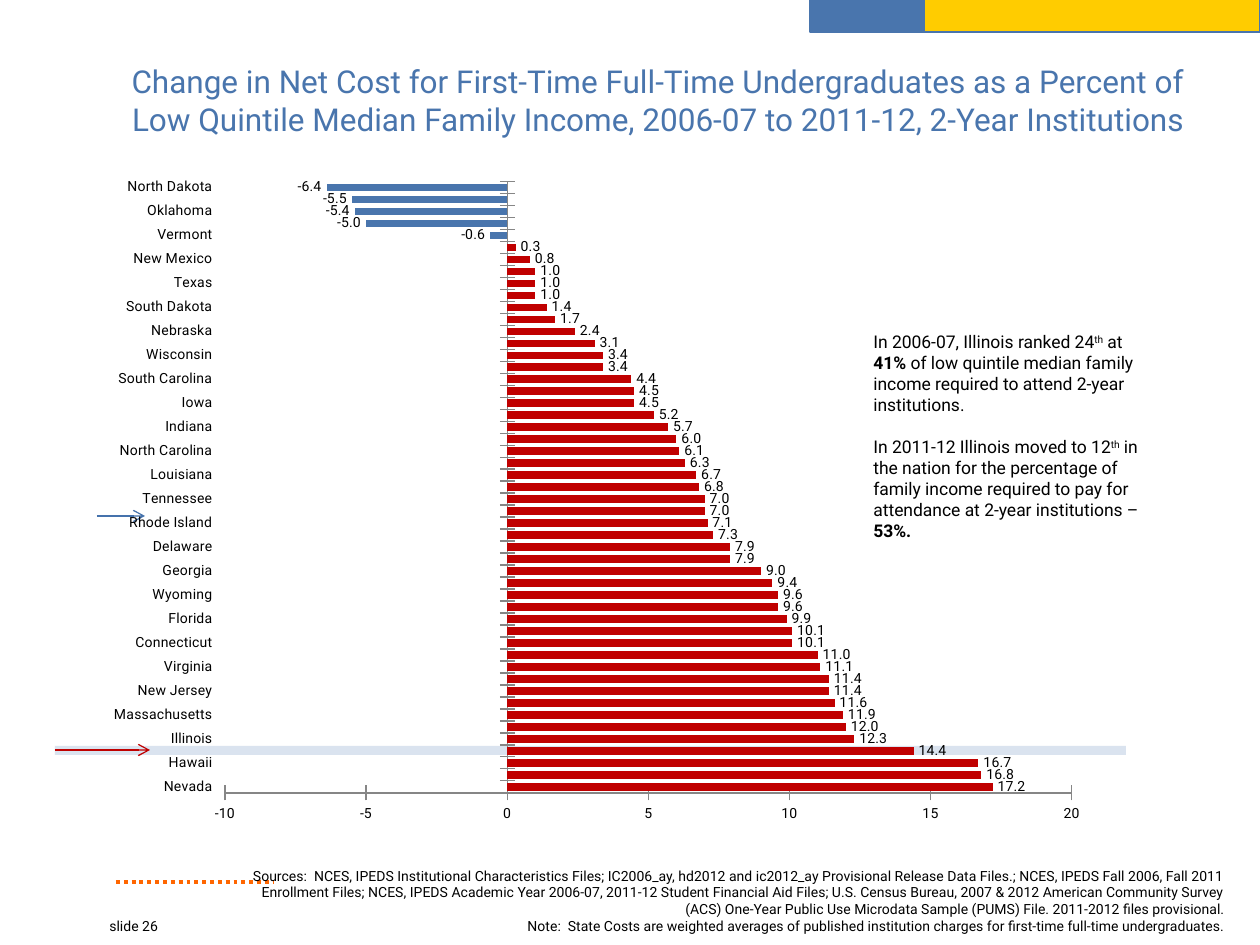
"""Build the slide on change in net cost at 2-year institutions by state."""
from lxml import etree
from pptx import Presentation
from pptx import util as u
from pptx.chart.data import CategoryChartData
from pptx.dml.color import RGBColor
from pptx.enum import chart as kinds
from pptx.enum import shapes, text
from pptx.enum.dml import MSO_LINE
from pptx.oxml.ns import qn

SCALE = u.Inches(1) / 126
FONT = "Roboto"
BLUE, RED, BLACK, GREY = "4975AD", "C00000", "000000", "868686"

TITLE = [[("Change in Net Cost for First-Time Full-Time Undergraduates as a Percent of "
           "Low Quintile Median Family Income, 2006-07 to 2011-12, 2-Year Institutions", "")]]
NUMBER = [[("slide 26", "")]]
SOURCES = [
    [("Sources:  NCES, IPEDS Institutional Characteristics Files; IC2006_ay, hd2012 and ic2012_ay "
      "Provisional Release Data Files.; NCES, IPEDS Fall 2006, Fall 2011 Enrollment Files; NCES, "
      "IPEDS Academic Year 2006-07, 2011-12 Student Financial Aid Files; U.S. Census Bureau, "
      "2007 & 2012 American Community Survey (ACS) One-Year Public Use Microdata Sample (PUMS) "
      "File. 2011-2012 files provisional.", "")],
    [("Note:  State Costs are weighted averages of published institution charges for "
      "first-time full-time undergraduates.", "")],
]
FINDINGS = [
    [("In 2006-07, Illinois ranked 24", ""), ("th", "super"), (" at ", ""), ("41%", "bold"),
     (" of low quintile median family income required to attend 2-year institutions.", "")],
    [("In 2011-12 Illinois moved to 12", ""), ("th", "super"),
     (" in the nation for the percentage of family income required to pay for attendance "
      "at 2-year institutions – ", ""), ("53%.", "bold")],
]
STATES = [
    ("Nevada", 17.2), ("New Hampshire", 16.8), ("Hawaii", 16.7), ("Kentucky", 14.4),
    ("Illinois", 12.3), ("Mississippi", 12), ("Massachusetts", 11.9), ("New York", 11.6),
    ("New Jersey", 11.4), ("Colorado", 11.4), ("Virginia", 11.1), ("Oregon", 11),
    ("Connecticut", 10.1), ("California", 10.1), ("Florida", 9.9), ("Ohio", 9.6),
    ("Wyoming", 9.6), ("Michigan", 9.4), ("Georgia", 9), ("Arizona", 7.9),
    ("Delaware", 7.9), ("Idaho", 7.3), ("Rhode Island", 7.1), ("Nation", 7),
    ("Tennessee", 7), ("Washington", 6.8), ("Louisiana", 6.7), ("Pennsylvania", 6.3),
    ("North Carolina", 6.1), ("Maryland", 6), ("Indiana", 5.7), ("Alabama", 5.2),
    ("Iowa", 4.5), ("Missouri", 4.5), ("South Carolina", 4.4), ("Minnesota", 3.4),
    ("Wisconsin", 3.4), ("Alaska", 3.1), ("Nebraska", 2.4), ("Utah", 1.7),
    ("South Dakota", 1.4), ("Kansas", 1), ("Texas", 1), ("Maine", 1),
    ("New Mexico", 0.8), ("Arkansas", 0.3), ("Vermont", -0.6), ("Montana", -5),
    ("Oklahoma", -5.4), ("West Virginia", -5.5), ("North Dakota", -6.4),
]
BARS = [  # left, top, width, height, fill, line
    (810, -1, 115, 33, BLUE, BLUE),
    (924, -1, 336, 33, "FFCC00", BLUE),
    (55, 746, 1071, 9, "DAE3EF", None),
]
LINES = [  # left, right, y, colour, points, arrow
    (116, 273, 882, "FF6600", 2.25, False),
    (55, 150, 750, RED, 0.75, True),
    (97, 145, 516, "4572AC", 0.75, True),
]
TEXTS = [  # box, paragraphs, size, colour, alignment, anchor, gap
    ((63, 34, 1134, 132), TITLE, 18, BLUE, "RIGHT", "MIDDLE", 0),
    ((97, 911, 126, 34), NUMBER, 8, BLACK, "LEFT", "TOP", 0),
    ((220, 861, 1018, 81), SOURCES, 8, BLACK, "RIGHT", "TOP", 0),
    ((861, 325, 305, 224), FINDINGS, 10, BLACK, "LEFT", "TOP", 12),
]
CHART = (94, 168, 1008, 672)
PLOT = {"x": 0.13, "y": 0.02, "w": 0.84, "h": 0.91}


def px(*lengths):
    return [round(length * SCALE) for length in lengths]


def colour(value):
    return RGBColor.from_string(value)


def paint(fill, value):
    fill.solid()
    fill.fore_color.rgb = colour(value)


def style(font, size, value=BLACK):
    font.name, font.size = FONT, u.Pt(size)
    font.color.rgb = colour(value)


def add_bar(page, left, top, width, height, fill, line):
    bar = page.shapes.add_shape(shapes.MSO_SHAPE.RECTANGLE, *px(left, top, width, height))
    bar.shadow.inherit = False
    paint(bar.fill, fill)
    if line:
        bar.line.color.rgb, bar.line.width = colour(line), u.Pt(0.75)
    else:
        bar.line.fill.background()


def add_line(page, left, right, y, value, points, arrow):
    rule = page.shapes.add_connector(shapes.MSO_CONNECTOR.STRAIGHT, *px(left, y, right, y))
    rule.line.color.rgb, rule.line.width = colour(value), u.Pt(points)
    if arrow:
        etree.SubElement(rule.line._get_or_add_ln(), qn("a:tailEnd"), type="arrow")
    else:
        rule.line.dash_style = MSO_LINE.ROUND_DOT
    etree.SubElement(rule._element.spPr, qn("a:effectLst"))


def add_text(page, place, paragraphs, size, value, align, anchor, gap):
    frame = page.shapes.add_textbox(*px(*place)).text_frame
    frame.word_wrap = True
    frame.vertical_anchor = text.MSO_ANCHOR[anchor]
    for index, spans in enumerate(paragraphs):
        para = frame.add_paragraph() if index else frame.paragraphs[0]
        para.alignment = text.PP_ALIGN[align]
        if index and gap:
            para.space_before = u.Pt(gap)
        for words, look in spans:
            span = para.add_run()
            span.text = words
            style(span.font, size, value)
            span.font.bold = look == "bold"
            if look == "super":
                span.font._element.set("baseline", "30000")


def add_states(page):
    data = CategoryChartData(number_format="General")
    data.categories = [name for name, _ in STATES]
    data.add_series("Series 1", [change for _, change in STATES])
    chart = page.shapes.add_chart(kinds.XL_CHART_TYPE.BAR_CLUSTERED, *px(*CHART), data).chart
    chart.has_legend = chart.has_title = False
    style(chart.font, 10)
    plot = chart.plots[0]
    plot.gap_width, plot.vary_by_categories = 60, False
    series = plot.series[0]
    series.invert_if_negative = False
    paint(series.format.fill, RED)
    for index, (_, change) in enumerate(STATES):
        if change < 0:
            paint(series.points[index].format.fill, BLUE)
    labels = series.data_labels
    labels.show_value = True
    labels.number_format, labels.number_format_is_linked = "#,##0.0", False
    labels.position = kinds.XL_LABEL_POSITION.OUTSIDE_END
    style(labels.font, 8)
    for axis in (chart.category_axis, chart.value_axis):
        axis.has_major_gridlines = False
        axis.major_tick_mark = kinds.XL_TICK_MARK.CROSS
        axis.minor_tick_mark = kinds.XL_TICK_MARK.NONE
        axis.format.line.color.rgb = colour(GREY)
        style(axis.tick_labels.font, 8)
    chart.category_axis.tick_label_position = kinds.XL_TICK_LABEL_POSITION.LOW
    skip = etree.Element(qn("c:tickLblSkip"), val="2")
    chart.category_axis._element.find(qn("c:noMultiLvlLbl")).addprevious(skip)
    scale = chart.value_axis
    scale.minimum_scale, scale.maximum_scale, scale.major_unit = -10, 20, 5
    area = chart._chartSpace.chart.plotArea
    for old in area.findall(qn("c:layout")):
        area.remove(old)
    layout = etree.Element(qn("c:layout"))
    area.insert(0, layout)
    manual = etree.SubElement(layout, qn("c:manualLayout"))
    settings = {"layoutTarget": "inner", "xMode": "edge", "yMode": "edge", **PLOT}
    for name, value in settings.items():
        etree.SubElement(manual, qn(f"c:{name}"), val=str(value))


def main():
    deck = Presentation()
    deck.slide_width, deck.slide_height = px(1260, 945)
    page = deck.slides.add_slide(deck.slide_layouts[6])
    for bar in BARS:
        add_bar(page, *bar)
    for rule in LINES:
        add_line(page, *rule)
    add_states(page)
    for box in TEXTS:
        add_text(page, *box)
    deck.save("out.pptx")


if __name__ == "__main__":
    main()
